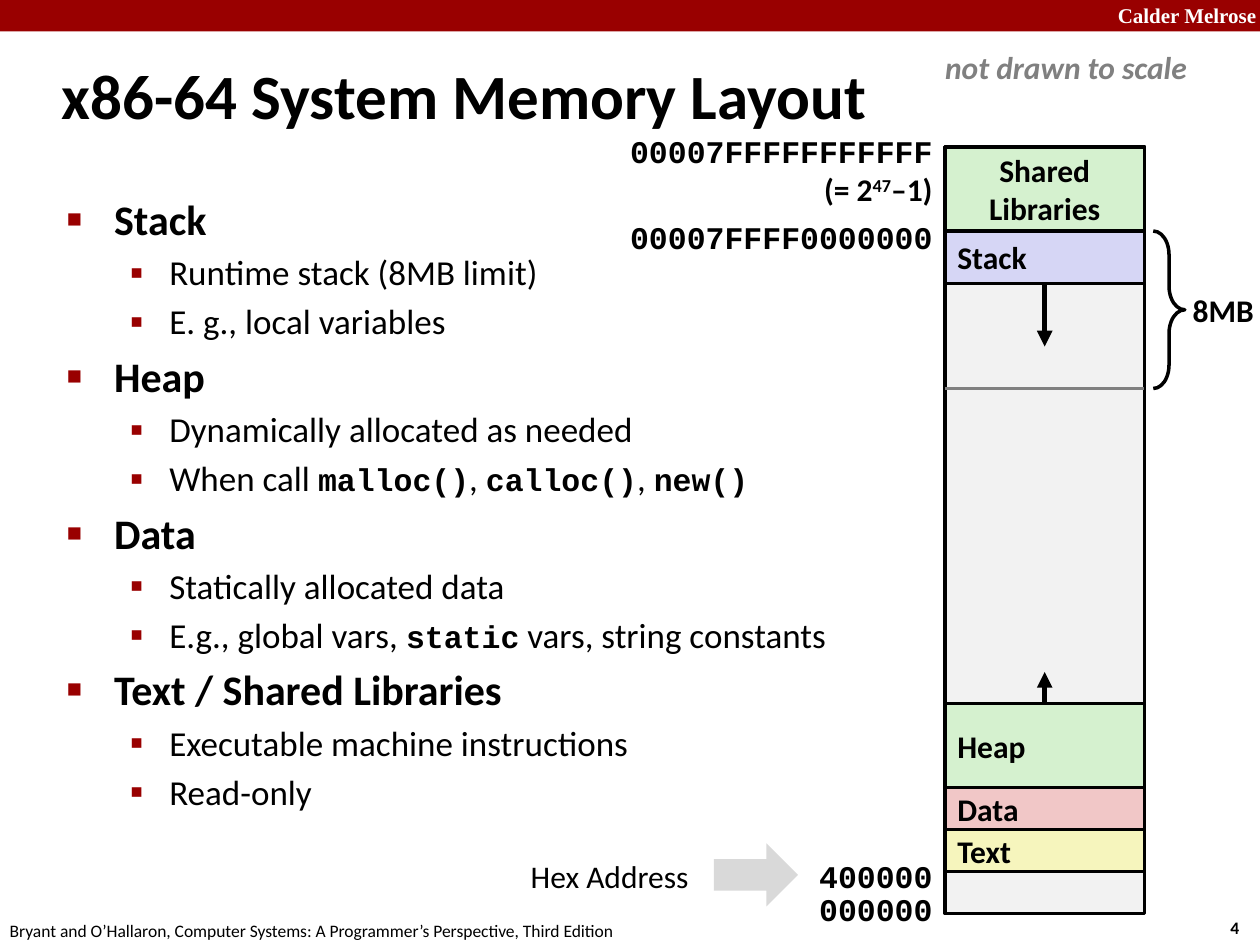
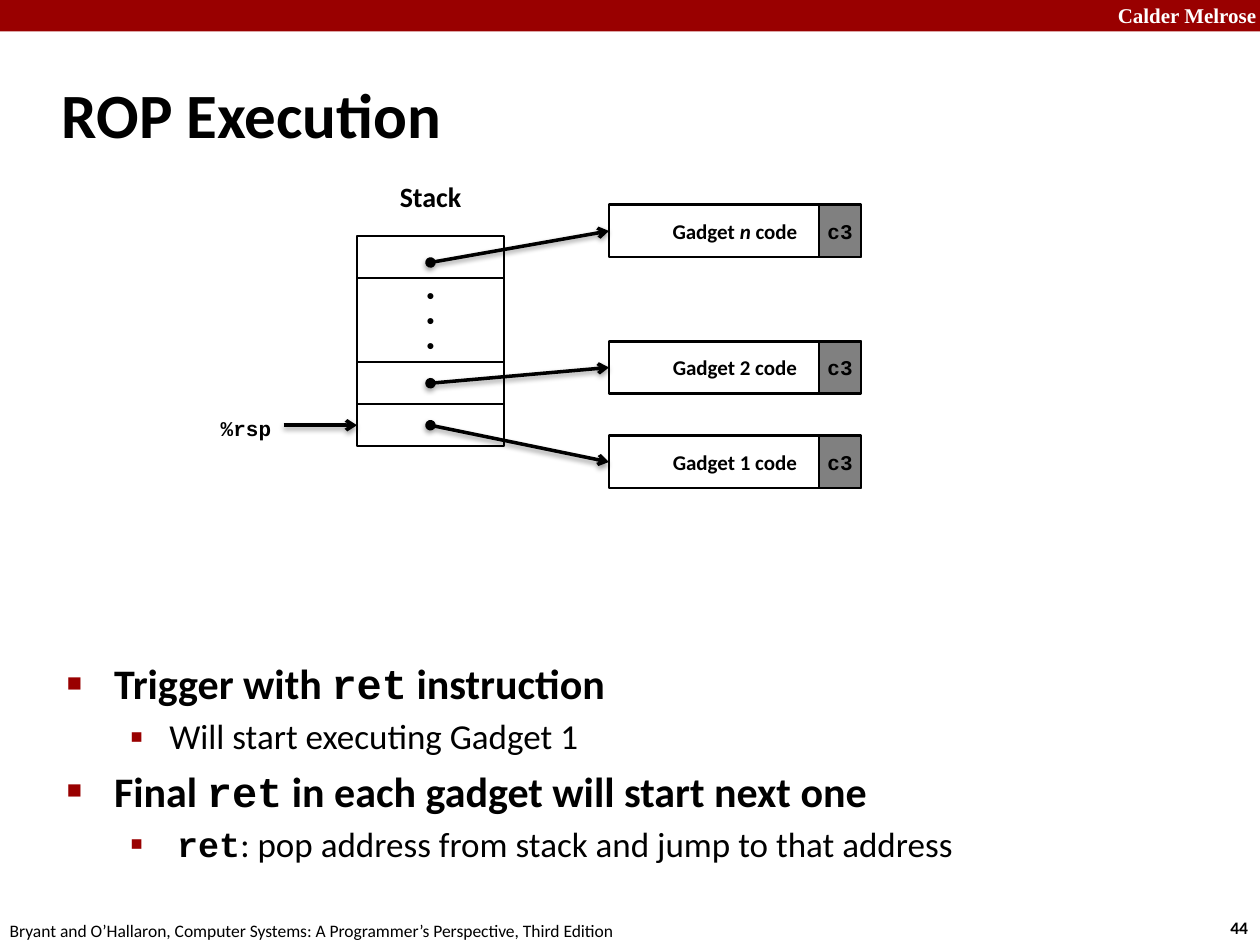
"""Build two lecture slides on memory layout and return-oriented programming."""
import lxml.etree
import pptx
import pptx.dml.color
import pptx.enum.shapes
import pptx.enum.text
import pptx.oxml
import pptx.oxml.ns
import pptx.util

Pt = pptx.util.Pt
SHAPE = pptx.enum.shapes.MSO_SHAPE
ALIGN = pptx.enum.text.PP_ALIGN
ANCHOR = pptx.enum.text.MSO_ANCHOR

RED, BLACK, WHITE = "990000", "000000", "FFFFFF"
GRAY, LIGHT_GRAY, ARROW_GRAY = "808080", "F2F2F2", "D9D9D9"
BLUE, GREEN, PINK, YELLOW = "D6D6F5", "D5F1CF", "F1C7C7", "F6F5BD"
MONO = "Courier New"
CODE = {"font": MONO, "bold": True}
SMALL_CODE = {"font": MONO, "bold": True, "size": 18}

BULLETS = [
    {"char": "■", "percent": 60, "margin": 27, "hang": 27, "size": 24, "bold": True},
    {"char": "▪", "percent": 110, "margin": 58.5, "hang": 22.5, "size": 20, "bold": False},
]


def rgb(color):
    """Turn a hex string into a colour."""
    return pptx.dml.color.RGBColor.from_string(color)


def add_xml(parent, tag, **attributes):
    """Append a drawing element and return it."""
    element = lxml.etree.SubElement(parent, pptx.oxml.ns.qn("a:" + tag))
    for name, value in attributes.items():
        element.set(name, str(value))
    return element


def write(para, text, size=18, font="Calibri", color=BLACK, bold=False,
          italic=False, raised=False):
    """Add one formatted span to a paragraph."""
    span = para.add_run()
    span.text = text
    span.font.size = Pt(size)
    span.font.name = font
    span.font.color.rgb = rgb(color)
    span.font.bold = bold
    span.font.italic = italic
    if raised:
        span.font._element.set("baseline", "30000")


def write_spans(para, spans, **style):
    """Write strings and (string, style) pairs into a paragraph."""
    for span in spans:
        text, own_style = (span, {}) if isinstance(span, str) else span
        write(para, text, **{**style, **own_style})


def fill_text(box, lines, align=ALIGN.LEFT, anchor=ANCHOR.TOP, wrap=True,
              side_inset=7.2, **style):
    """Write each list of spans as a paragraph of a box."""
    frame = box.text_frame
    frame.word_wrap = wrap
    frame.vertical_anchor = anchor
    frame.margin_left = frame.margin_right = Pt(side_inset)
    for number, spans in enumerate(lines):
        para = frame.add_paragraph() if number else frame.paragraphs[0]
        para.alignment = align
        write_spans(para, spans, **style)


def place(box, left, top, width, height):
    """Set the position and size of a box."""
    box.left, box.top, box.width, box.height = map(Pt, (left, top, width, height))


def add_label(page, left, top, width, height, *lines, wrap=False, **style):
    """Add a text box."""
    box = page.shapes.add_textbox(*map(Pt, (left, top, width, height)))
    fill_text(box, lines, wrap=wrap, **style)
    return box


def add_box(page, left, top, width, height, fill=None, line=None, weight=1,
            kind=SHAPE.RECTANGLE):
    """Add a preset shape with optional fill and outline."""
    box = page.shapes.add_shape(kind, *map(Pt, (left, top, width, height)))
    box.shadow.inherit = False
    if fill:
        box.fill.solid()
        box.fill.fore_color.rgb = rgb(fill)
    else:
        box.fill.background()
    if line:
        box.line.color.rgb = rgb(line)
        box.line.width = Pt(weight)
    else:
        box.line.fill.background()
    return box


def add_line(page, start, end, color=BLACK, weight=2, head=None, tail=None,
             shadow=False):
    """Add a straight line with optional ends and a soft shadow."""
    line = page.shapes.add_connector(pptx.enum.shapes.MSO_CONNECTOR.STRAIGHT,
                                     *map(Pt, (*start, *end)))
    line.line.color.rgb = rgb(color)
    line.line.width = Pt(weight)
    outline = line.line._get_or_add_ln()
    if head:
        add_xml(outline, "headEnd", type=head)
    if tail:
        add_xml(outline, "tailEnd", type=tail)
    effects = add_xml(line._element.spPr, "effectLst")
    if shadow:
        outer = add_xml(effects, "outerShdw", blurRad=Pt(3.1), dist=Pt(1.6),
                        dir=5400000, rotWithShape=0)
        add_xml(add_xml(outer, "srgbClr", val=BLACK), "alpha", val=38000)
    return line


def add_bullet(para, level):
    """Give a paragraph the indent and marker of its level."""
    rule = BULLETS[level]
    para.level = level
    format_element = para._p.get_or_add_pPr()
    format_element.set("marL", str(Pt(rule["margin"])))
    format_element.set("indent", str(-Pt(rule["hang"])))
    add_xml(add_xml(format_element, "buClr"), "srgbClr", val=RED)
    add_xml(format_element, "buSzPct", val=rule["percent"] * 1000)
    add_xml(format_element, "buFont", typeface="Arial")
    add_xml(format_element, "buChar", char=rule["char"])


def fill_list(body, items):
    """Write (level, spans) items as a bulleted list."""
    frame = body.text_frame
    frame.auto_size = pptx.enum.text.MSO_AUTO_SIZE.NONE
    for number, (level, *spans) in enumerate(items):
        para = frame.add_paragraph() if number else frame.paragraphs[0]
        add_bullet(para, level)
        rule = BULLETS[level]
        write_spans(para, spans, size=rule["size"], bold=rule["bold"])


def add_page(deck, title, title_top, body_top, body_height, items, number):
    """Add a page with its band, footer, title and list."""
    page = deck.slides.add_slide(deck.slide_layouts[1])
    add_box(page, 0, 0, 720, 18, fill=RED)
    add_label(page, 622, -2, 103, 21.6, ["Calder Melrose"], wrap=True,
              align=ALIGN.RIGHT, size=12, font="Times New Roman", color=WHITE, bold=True)
    add_label(page, 696, 520.5, 27, 19.4, [str(number)], size=10, bold=True)
    add_label(page, -1.5, 522, 366, 19.4,
              ["Bryant and O’Hallaron, Computer Systems: "
               "A Programmer’s Perspective, Third Edition"], size=10)
    heading, body = page.placeholders
    place(heading, 28, title_top, 598, 60)
    heading.text_frame.auto_size = pptx.enum.text.MSO_AUTO_SIZE.NONE
    fill_text(heading, [[title]], anchor=ANCHOR.MIDDLE, size=36, bold=True)
    place(body, 31, body_top, 622, body_height)
    fill_list(body, items)
    return page


def add_segment(page, top, height, fill, *names, align=ALIGN.LEFT):
    """Add one named block of the memory column."""
    box = add_box(page, 540, top, 114, height, fill, BLACK, 2)
    fill_text(box, [[name] for name in names], align=align,
              anchor=ANCHOR.MIDDLE, bold=True)
    return box


def add_address(page, top, address, *more_lines, width=188, height=29):
    """Add an address label that ends at the memory column."""
    add_label(page, 540 - width, top, width, height, [(address, CODE)],
              *more_lines, align=ALIGN.RIGHT, bold=True)


def add_memory_column(page):
    """Draw the memory column with its blocks, addresses and marks."""
    add_box(page, 540, 84, 114, 438, LIGHT_GRAY, BLACK, 2)
    add_segment(page, 84, 48, GREEN, "Shared", "Libraries", align=ALIGN.CENTER)
    stack = add_segment(page, 132, 30, BLUE, "Stack")
    heap = add_segment(page, 402, 48, GREEN, "Heap")
    add_segment(page, 450, 24, PINK, "Data")
    add_segment(page, 474, 24, YELLOW, "Text")
    growth = add_line(page, (597, 162), (597, 198), weight=3, tail="triangle")
    growth.begin_connect(stack, 2)
    growth = add_line(page, (597, 402), (597, 384), weight=3, tail="triangle")
    growth.begin_connect(heap, 0)
    add_line(page, (540, 222), (654, 222), color=GRAY)
    brace = add_box(page, 659, 132, 18, 90, line=BLACK, weight=2, kind=SHAPE.LEFT_BRACE)
    brace.rotation = 180
    brace.adjustments[0] = 0.75
    add_label(page, 674.5, 163, 50, 29, ["8MB"], bold=True)
    add_address(page, 72, "00007FFFFFFFFFFF", ["(= 2", ("47", {"raised": True}), "–1)"],
                height=51)
    add_address(page, 121, "00007FFFF0000000")
    add_address(page, 486, "400000", width=80)
    add_address(page, 505, "000000", width=80)
    add_label(page, 232.5, 486, 168, 29, ["Hex Address"], wrap=True, align=ALIGN.RIGHT)
    add_box(page, 408, 482, 48, 36, ARROW_GRAY, kind=SHAPE.RIGHT_ARROW)
    add_label(page, 533, 24, 153, 29, ["not drawn to scale"],
              color=GRAY, bold=True, italic=True)


def add_gadget(page, top, *name):
    """Add a gadget's code block with its closing return byte."""
    centred = {"align": ALIGN.CENTER, "anchor": ANCHOR.MIDDLE, "size": 12, "bold": True}
    byte = add_box(page, 468, top, 24, 30, GRAY, BLACK, 1)
    fill_text(byte, [["c3"]], side_inset=0, font=MONO, **centred)
    gadget = add_box(page, 348, top, 144, 30, line=BLACK, weight=1.5)
    fill_text(gadget, [["Gadget ", *name, " code"]], **centred)
    return gadget


def add_gadget_chain(page):
    """Draw the stack whose cells point to the gadgets."""
    add_label(page, 204, 99, 84, 27, ["Stack"], wrap=True, align=ALIGN.CENTER,
              size=16, bold=True)
    top, cells = 135, []
    for height in (24, 48, 24, 24):
        cells.append(add_box(page, 204, top, 84, height, line=BLACK))
        top += height
    fill_text(cells[1], [["•"]] * 3, align=ALIGN.CENTER, anchor=ANCHOR.MIDDLE,
              size=12, font="Arial", bold=True)
    gadgets = [(150, 117, ("n", {"italic": True})), (219, 195, "2"), (243, 249, "1")]
    for dot, gadget_top, name in gadgets:
        gadget = add_gadget(page, gadget_top, name)
        pointer = add_line(page, (246, dot), (348, gadget_top + 15),
                           head="oval", tail="arrow", shadow=True)
        pointer.end_connect(gadget, 1)
    pointer = add_line(page, (162, 243), (204, 243), tail="arrow", shadow=True)
    pointer.end_connect(cells[-1], 1)
    add_label(page, 78, 232.5, 84, 24, ["%rsp"], wrap=True, align=ALIGN.RIGHT,
              anchor=ANCHOR.MIDDLE, size=12, **CODE)


def main():
    """Build and save the deck."""
    deck = pptx.Presentation()
    deck.slide_width, deck.slide_height = Pt(720), Pt(540)
    page = add_page(deck, "x86-64 System Memory Layout", 24, 107, 392, [
        (0, "Stack"),
        (1, "Runtime stack (8MB limit)"),
        (1, "E. g., local variables"),
        (0, "Heap"),
        (1, "Dynamically allocated as needed"),
        (1, "When call ", ("malloc()", SMALL_CODE), ", ", ("calloc()", SMALL_CODE),
         ", ", ("new()", SMALL_CODE)),
        (0, "Data"),
        (1, "Statically allocated data"),
        (1, "E.g., global vars, ", ("static", SMALL_CODE), " vars, string constants"),
        (0, "Text / Shared Libraries"),
        (1, "Executable machine instructions"),
        (1, "Read-only"),
    ], 4)
    add_memory_column(page)
    page = add_page(deck, "ROP Execution", 35, 372, 127, [
        (0, "Trigger with ", ("ret", CODE), " instruction"),
        (1, "Will start executing Gadget 1"),
        (0, "Final ", ("ret", CODE), " in each gadget will start next one"),
        (1, " ", ("ret", CODE), ": pop address from stack and jump to that address"),
    ], 44)
    add_gadget_chain(page)
    deck.save("out.pptx")


if __name__ == "__main__":
    main()
